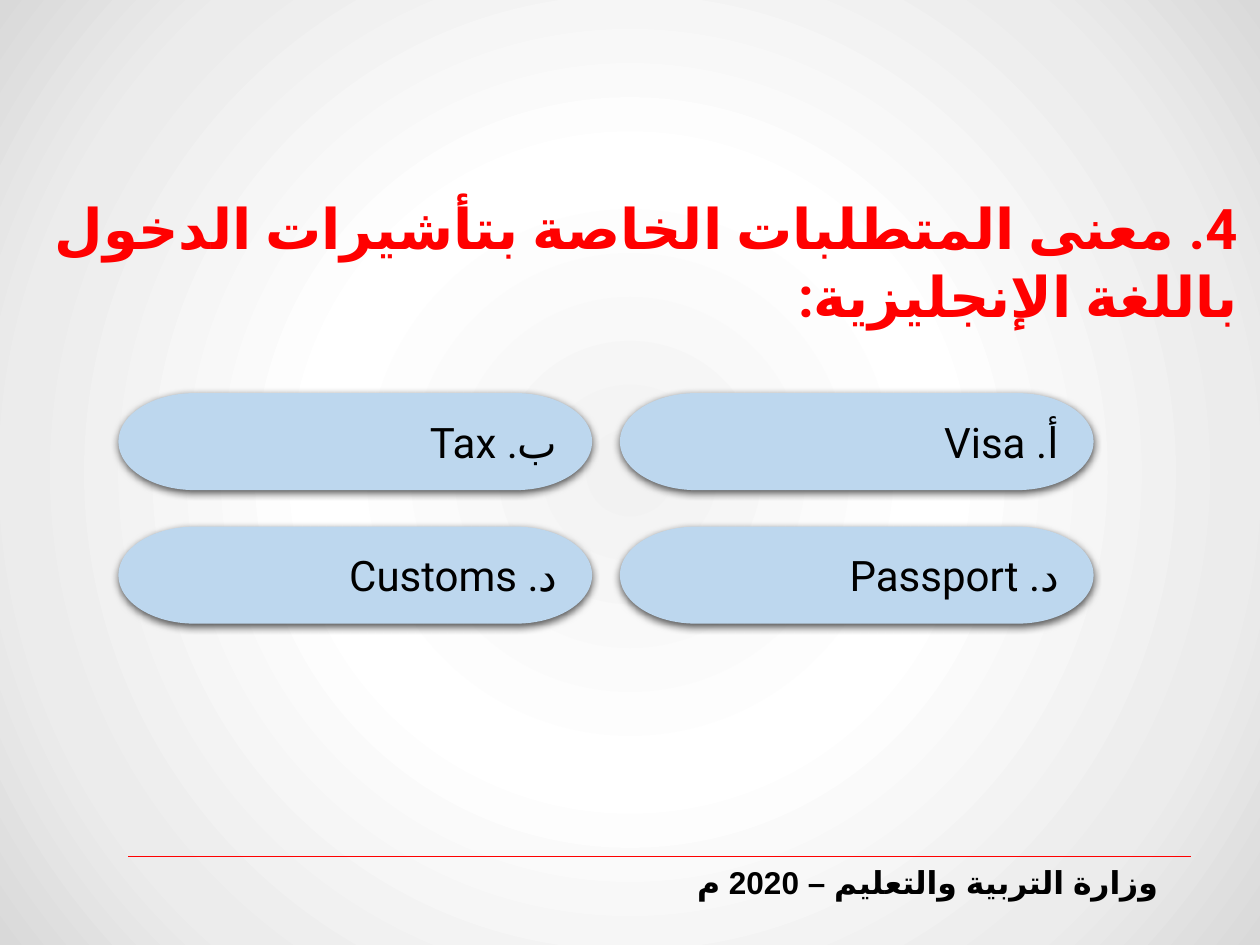
from dataclasses import dataclass

from lxml.etree import SubElement
from pptx import Presentation
from pptx.dml.color import RGBColor
from pptx.enum.shapes import MSO_CONNECTOR, MSO_SHAPE
from pptx.enum.text import MSO_ANCHOR, PP_ALIGN
from pptx.oxml import parse_xml
from pptx.oxml.ns import nsdecls, qn
from pptx.util import Inches, Pt


@dataclass(frozen=True)
class Theme:
    accent: str = "FF0000"
    text: str = "000000"
    answer_fill: str = "BDD7EE"
    backdrop: tuple = ((0, "F2F2F2"), (39, "FFFFFF"), (78, "ECECEC"), (100, "D9D9D9"))
    body_font: str = "Roboto"
    footer_font: str = "Calibri"
    footer_arabic_font: str = "Arial"
    language: str = "ar-SA"
    question_size: int = 32
    answer_size: int = 24
    footer_size: int = 18


THEME = Theme()


def write_text(shape, text, size, font=THEME.body_font, arabic_font=THEME.body_font,
               color=THEME.text, bold=False, anchor=MSO_ANCHOR.TOP):
    """Write one right-to-left paragraph into the shape."""
    frame = shape.text_frame
    frame.word_wrap = True
    frame.vertical_anchor = anchor
    para = frame.paragraphs[0]
    para.alignment = PP_ALIGN.RIGHT
    para._p.get_or_add_pPr().set("rtl", "1")
    span = para.add_run()
    span.text = text
    span.font.size = Pt(size)
    span.font.name = font
    span.font.bold = bold
    span.font.color.rgb = RGBColor.from_string(color)
    properties = span._r.get_or_add_rPr()
    properties.set("lang", THEME.language)
    SubElement(properties, qn("a:cs"), typeface=arabic_font)


def paint_background(page):
    """Fill the page with a gradient that spreads in circles from its centre."""
    page.background.fill.solid()
    solid = next(page._element.iter(qn("a:solidFill")))
    stops = "".join(
        f'<a:gs pos="{place * 1000}"><a:srgbClr val="{color}"/></a:gs>'
        for place, color in THEME.backdrop)
    gradient = parse_xml(
        f'<a:gradFill {nsdecls("a")} rotWithShape="1"><a:gsLst>{stops}</a:gsLst>'
        '<a:path path="circle">'
        '<a:fillToRect l="50000" t="50000" r="50000" b="50000"/>'
        '</a:path></a:gradFill>')
    solid.getparent().replace(solid, gradient)


def add_drop_shadow(shape):
    shape._element.spPr.append(parse_xml(
        f'<a:effectLst {nsdecls("a")}>'
        f'<a:outerShdw blurRad="{Pt(4.5)}" dist="{Pt(1.5)}" dir="5400000" '
        'algn="ctr" rotWithShape="0"><a:srgbClr val="000000">'
        '<a:alpha val="63000"/></a:srgbClr></a:outerShdw></a:effectLst>'))


def add_question(page, left, top, width, height, text):
    box = page.shapes.add_textbox(left, top, width, height)
    write_text(box, text, THEME.question_size, color=THEME.accent, bold=True)


def add_answers(page, left, top, width, height, rows):
    """Place the answers in a grid that fills the box; each row reads right to left."""
    pill_width, pill_height = Inches(3.76), Inches(0.77)
    column_step = width - pill_width
    row_step = (height - pill_height) // (len(rows) - 1)
    for row, answers in enumerate(rows):
        for column, answer in enumerate(reversed(answers)):
            pill = page.shapes.add_shape(
                MSO_SHAPE.FLOWCHART_TERMINATOR, left + column * column_step,
                top + row * row_step, pill_width, pill_height)
            pill.fill.solid()
            pill.fill.fore_color.rgb = RGBColor.from_string(THEME.answer_fill)
            pill.line.fill.background()
            add_drop_shadow(pill)
            write_text(pill, answer, THEME.answer_size, anchor=MSO_ANCHOR.MIDDLE)


def add_footer(page, left, top, width, height, text):
    box = page.shapes.add_textbox(left, top, width, height)
    write_text(box, text, THEME.footer_size, font=THEME.footer_font,
               arabic_font=THEME.footer_arabic_font, bold=True)
    rule = page.shapes.add_connector(
        MSO_CONNECTOR.STRAIGHT, Inches(1.02), top, Inches(9.45), top)
    rule.line.color.rgb = RGBColor.from_string(THEME.accent)
    rule.line.width = Pt(0.5)
    SubElement(rule._element.spPr, qn("a:effectLst"))


def main():
    deck = Presentation()
    deck.slide_width, deck.slide_height = Inches(10), Inches(7.5)
    page = deck.slides.add_slide(deck.slide_layouts[6])
    paint_background(page)
    add_question(page, Inches(0.33), Inches(1.49), Inches(9.59), Inches(0.64),
                 "4. معنى المتطلبات الخاصة بتأشيرات الدخول باللغة الإنجليزية:")
    add_answers(page, Inches(0.94), Inches(3.12), Inches(7.74), Inches(1.83),
                [("أ. Visa", "ب. Tax"), ("د. Passport", "د. Customs")])
    add_footer(page, Inches(0.7), Inches(6.8), Inches(8.59), Inches(0.4),
               "وزارة التربية والتعليم – 2020 م")
    deck.save("out.pptx")


if __name__ == "__main__":
    main()
